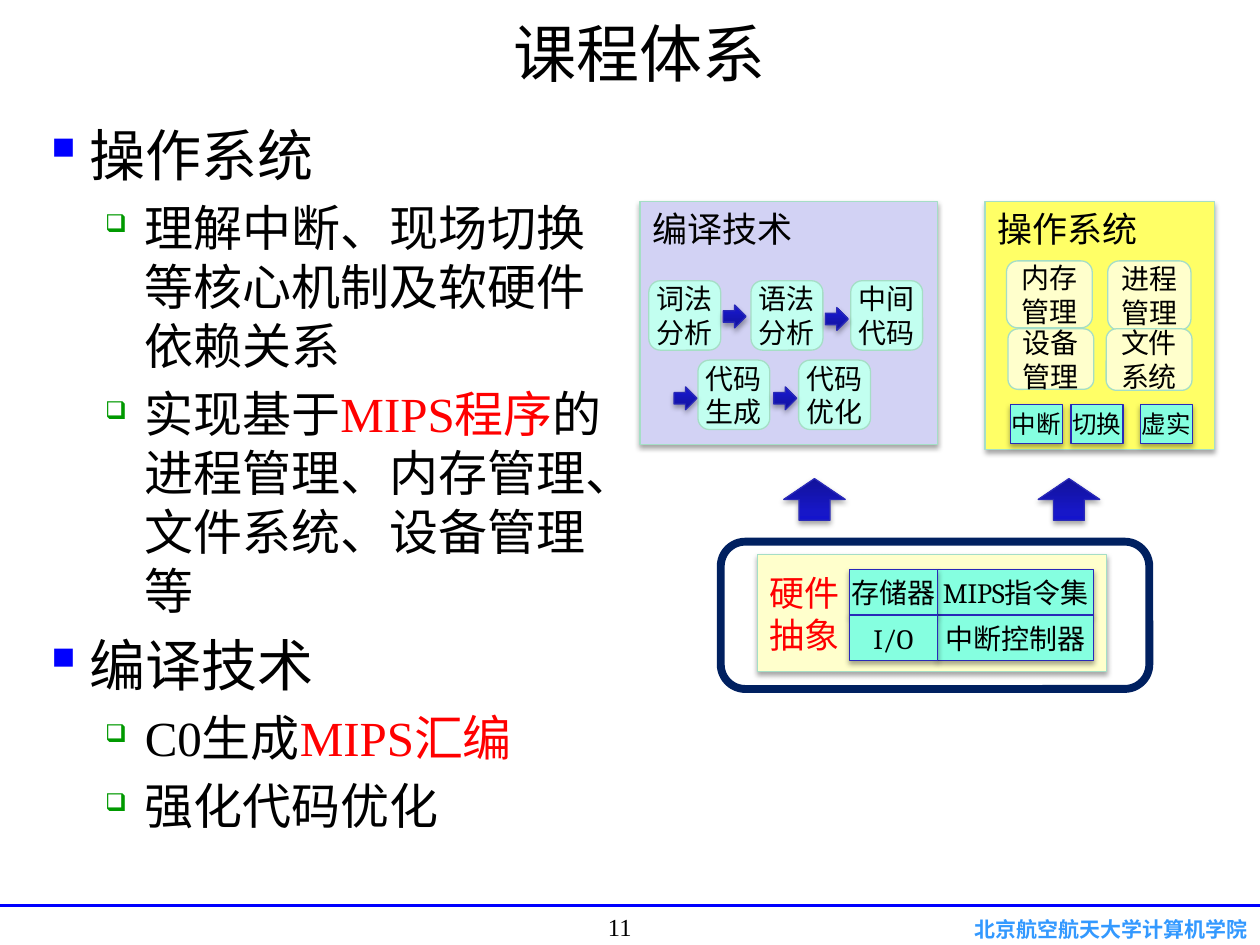
import lxml.etree
import pptx
import pptx.dml.color
import pptx.enum.shapes
import pptx.enum.text
import pptx.oxml
import pptx.oxml.ns
import pptx.util

Cm = pptx.util.Cm
Pt = pptx.util.Pt
color = pptx.dml.color.RGBColor.from_string
qn = pptx.oxml.ns.qn
SHAPE = pptx.enum.shapes.MSO_SHAPE
ALIGN = pptx.enum.text.PP_ALIGN
ANCHOR = pptx.enum.text.MSO_ANCHOR
NAMESPACE = 'xmlns:a="http://schemas.openxmlformats.org/drawingml/2006/main"'
CJK_FONT = "Noto Sans CJK SC"
SERIF = "Times New Roman"

SHADOW = f"""<a:effectLst {NAMESPACE}>
<a:outerShdw blurRad="39400" dist="22900" dir="5400000" rotWithShape="0">
<a:srgbClr val="000000"><a:alpha val="35000"/></a:srgbClr></a:outerShdw></a:effectLst>"""
GRADIENT = f"""<a:gradFill {NAMESPACE} rotWithShape="1"><a:gsLst>
<a:gs pos="0"><a:srgbClr val="12129A"/></a:gs>
<a:gs pos="80000"><a:srgbClr val="1717C8"/></a:gs>
<a:gs pos="100000"><a:srgbClr val="1414CC"/></a:gs>
</a:gsLst><a:lin ang="16200000" scaled="0"/></a:gradFill>"""

presentation = pptx.Presentation()
presentation.slide_width = Cm(25.4)
presentation.slide_height = Cm(19.05)
slide = presentation.slides.add_slide(presentation.slide_layouts[6])


def style_paragraph(paragraph, size, text_color="000000", font=CJK_FONT, bold=False):
    """Format every run and fix the line pitch at 1.2 times the text size."""
    paragraph.line_spacing = Pt(1.2 * size)
    for run in paragraph.runs:
        run.font.size = Pt(size)
        run.font.name = font
        run.font.bold = bold
        run.font.color.rgb = color(text_color)
        east_asian = lxml.etree.Element(qn("a:ea"), typeface=CJK_FONT)
        run.font._element.find(qn("a:latin")).addnext(east_asian)


def add_box(kind, box, text="", size=16, fill=None, line=None, shadow=False,
            align=ALIGN.CENTER, anchor=ANCHOR.MIDDLE, inset=None, wrap=False, **text_style):
    """Add a preset shape, or a text box when kind is None; box is in centimetres."""
    position = [Cm(length) for length in box]
    if kind is None:
        shape = slide.shapes.add_textbox(*position)
    else:
        shape = slide.shapes.add_shape(kind, *position)
        shape.shadow.inherit = False
        shape.fill.background()
    if fill:
        shape.fill.solid()
        shape.fill.fore_color.rgb = color(fill)
    if line:
        shape.line.color.rgb = color(line)
        shape.line.width = Pt(0.75)
    if shadow:
        properties = shape._element.spPr
        properties.replace(properties.find(qn("a:effectLst")), pptx.oxml.parse_xml(SHADOW))
    frame = shape.text_frame
    frame.word_wrap = wrap
    frame.vertical_anchor = anchor
    if inset is not None:
        frame.margin_left = frame.margin_right = Cm(inset)
        frame.margin_top = frame.margin_bottom = Cm(inset)
    if text:
        frame.text = text
        for paragraph in frame.paragraphs:
            paragraph.alignment = align
            style_paragraph(paragraph, size, **text_style)
    return shape


# Footer and title
footer = add_box(None, (11.51, 18.47, 13.89, 0.51), "北京航空航天大学计算机学院", 12, wrap=True,
                 align=ALIGN.RIGHT, anchor=ANCHOR.TOP, text_color="3399FF", bold=True)
footer.text_frame.margin_top = footer.text_frame.margin_bottom = 0
rule = slide.shapes.add_connector(pptx.enum.shapes.MSO_CONNECTOR.STRAIGHT,
                                  Cm(25.4), Cm(18.26), Cm(0), Cm(18.26))
rule.line.color.rgb = color("0000FF")
rule.line.width = Pt(1.5)
lxml.etree.SubElement(rule._element.spPr, qn("a:effectLst"))
add_box(None, (9.5, 18.26, 5.99, 0.71), "11", 14, wrap=True, anchor=ANCHOR.TOP, font=SERIF)
add_box(None, (0.58, 0.13, 24.61, 1.85), "课程体系", 36, wrap=True, font=SERIF)

# Outline: level and pieces of text, every second piece in red
outline = [
    (0, ["操作系统"]),
    (1, ["理解中断、现场切换等核心机制及软硬件依赖关系"]),
    (1, ["实现基于", "MIPS程序", "的进程管理、内存管理、文件系统、设备管理等"]),
    (0, ["编译技术"]),
    (1, ["C0生成", "MIPS汇编"]),
    (1, ["强化代码优化"]),
]
# Size, left margin, indent, bullet, bullet colour, bullet size in percent
levels = [(32, 0.95, -0.95, "▪", "0000FF", 100), (28, 2.06, -0.8, "❑", "009900", 50)]
body = add_box(None, (0.61, 2.31, 12.09, 15.01), fill="FFFFFF", wrap=True, anchor=ANCHOR.TOP)
for index, (level, pieces) in enumerate(outline):
    size, margin, indent, bullet, bullet_color, bullet_size = levels[level]
    frame = body.text_frame
    paragraph = frame.add_paragraph() if index else frame.paragraphs[0]
    paragraph.level = level
    for piece in pieces:
        paragraph.add_run().text = piece
    style_paragraph(paragraph, size, font=SERIF)
    for run in paragraph.runs[1::2]:
        run.font.color.rgb = color("FF0000")
    if index:
        paragraph.space_before = Pt(0.2 * size)
    properties = paragraph._p.get_or_add_pPr()
    properties.set("marL", str(Cm(margin)))
    properties.set("indent", str(Cm(indent)))
    bullet_fill = lxml.etree.SubElement(properties, qn("a:buClr"))
    lxml.etree.SubElement(bullet_fill, qn("a:srgbClr"), val=bullet_color)
    lxml.etree.SubElement(properties, qn("a:buSzPct"), val=str(bullet_size * 1000))
    lxml.etree.SubElement(properties, qn("a:buChar"), char=bullet)

# Course panels
for name, box, fill in [("编译技术", (12.9, 4.06, 6, 4.9), "D2D2F4"),
                        ("操作系统", (19.86, 4.06, 4.62, 5), "FFFF66")]:
    add_box(SHAPE.RECTANGLE, box, name, 20, fill, "A5DEC6", True,
            align=ALIGN.LEFT, anchor=ANCHOR.TOP)

# Operating system modules and mechanisms
for name, box in [("进程\n管理", (22.33, 5.26, 1.68, 1.4)), ("内存\n管理", (20.29, 5.26, 1.73, 1.35)),
                  ("设备\n管理", (20.32, 6.63, 1.73, 1.22)), ("文件\n系统", (22.3, 6.63, 1.73, 1.24))]:
    add_box(SHAPE.ROUNDED_RECTANGLE, box, name, fill="FFFFCC", line="A5DEC6")
for name, left in [("中断", 20.37), ("切换", 21.59), ("虚实", 22.99)]:
    add_box(SHAPE.RECTANGLE, (left, 8.15, 1.05, 0.79), name, 14, "85FFE0", "2929B8", True, inset=0.1)

# Hardware abstraction
add_box(SHAPE.RECTANGLE, (15.27, 11.18, 7.04, 2.36), "硬件\n抽象", 20, "FFFFCC", "A5DEC6", True,
        align=ALIGN.LEFT, text_color="FF0000")
for left, width, names in [(18.9, 3.15, ["MIPS指令集", "中断控制器"]), (17.12, 1.78, ["存储器", "I/O"])]:
    for row, name in enumerate(names):
        add_box(SHAPE.RECTANGLE, (left, 11.48 + 0.92 * row, width, 0.92), name, 16,
                "85FFE0", "2929B8", True, inset=0.1, font="Cambria")

# Compiler stages
for name, left, top in [("词法\n分析", 13.08, 5.66), ("语法\n分析", 15.14, 5.66),
                        ("中间\n代码", 17.15, 5.66), ("代码\n生成", 14.07, 7.26),
                        ("代码\n优化", 16.1, 7.26)]:
    add_box(SHAPE.ROUNDED_RECTANGLE, (left, top, 1.45, 1.4), name, fill="C2FFF0", line="A5DEC6")

# Arrows between stages, and upward from the hardware to the courses
stage_arrows = [(14.58, 6.15), (16.64, 6.2), (13.59, 7.8), (15.6, 7.8)]
course_arrows = [(20.93, 9.65), (15.8, 9.65)]
for kind, places, width, height in [(SHAPE.RIGHT_ARROW, stage_arrows, 0.46, 0.46),
                                    (SHAPE.DOWN_ARROW, course_arrows, 1.24, 0.84)]:
    for left, top in places:
        arrow = add_box(kind, (left, top, width, height), line="2929B8", shadow=True)
        properties = arrow._element.spPr
        properties.replace(properties.find(qn("a:noFill")), pptx.oxml.parse_xml(GRADIENT))
        if kind == SHAPE.DOWN_ARROW:
            properties.find(qn("a:xfrm")).set("flipV", "1")

hardware_frame = add_box(SHAPE.ROUNDED_RECTANGLE, (14.53, 10.92, 8.64, 2.97), line="002060")
hardware_frame.line.width = Pt(4.5)

presentation.save("out.pptx")
